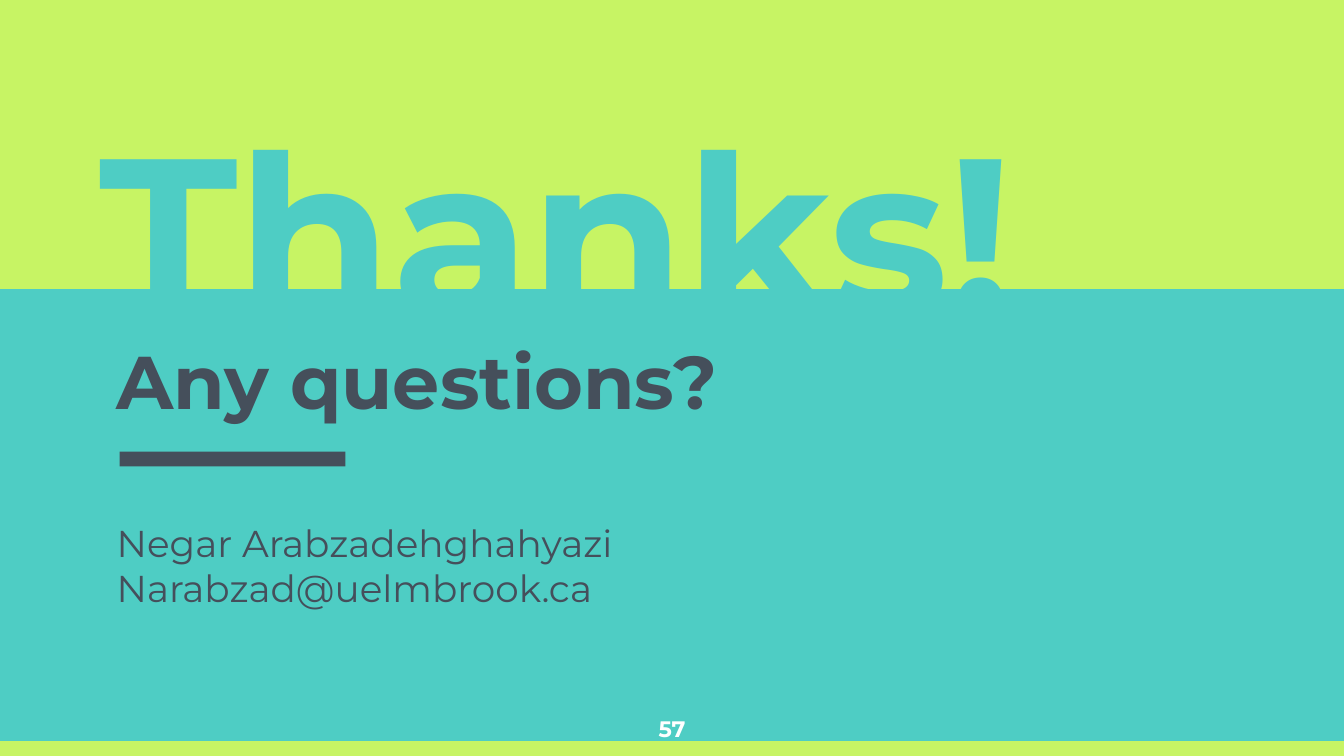
"""Build the closing slide with thanks, a question prompt and contact details."""
from pptx import Presentation
from pptx.dml.color import RGBColor
from pptx.enum.shapes import MSO_SHAPE
from pptx.enum.text import MSO_ANCHOR, MSO_AUTO_SIZE, PP_ALIGN
from pptx.util import Inches, Pt

LIME = RGBColor(0xC7, 0xF4, 0x64)
TEAL = RGBColor(0x4E, 0xCD, 0xC4)
SLATE = RGBColor(0x45, 0x4F, 0x5B)
WHITE = RGBColor(0xFF, 0xFF, 0xFF)
FONT = "Montserrat"
SLIDE_WIDTH = 10
SLIDE_HEIGHT = SLIDE_WIDTH * 9 / 16
BAR_HEIGHT = 0.11


def write_text(text_frame, text, size, color=SLATE, bold=False,
               align=PP_ALIGN.LEFT, anchor=MSO_ANCHOR.TOP, space_before=0):
    text_frame.text = text
    text_frame.word_wrap = True
    text_frame.auto_size = MSO_AUTO_SIZE.NONE
    text_frame.vertical_anchor = anchor
    text_frame.margin_left = text_frame.margin_right = Inches(0.1)
    text_frame.margin_top = text_frame.margin_bottom = Inches(0.1)
    for paragraph in text_frame.paragraphs:
        paragraph.alignment = align
        paragraph.space_before = Pt(space_before)
        font = paragraph.runs[0].font
        font.name = FONT
        font.size = Pt(size)
        font.bold = bold
        font.color.rgb = color


class SlideBuilder:
    def __init__(self, slide, background):
        self.slide = slide
        slide.background.fill.solid()
        slide.background.fill.fore_color.rgb = background

    def rectangle(self, left, top, width, height, color):
        shape = self.slide.shapes.add_shape(
            MSO_SHAPE.RECTANGLE, *map(Inches, (left, top, width, height)))
        shape.shadow.inherit = False
        shape.fill.solid()
        shape.fill.fore_color.rgb = color
        shape.line.fill.background()

    def title(self, left, top, width, height, text, **style):
        title = self.slide.shapes.title
        title.left, title.top = Inches(left), Inches(top)
        title.width, title.height = Inches(width), Inches(height)
        write_text(title.text_frame, text, **style)
        title.element.getparent().append(title.element)

    def text(self, left, top, width, height, text, **style):
        shape = self.slide.shapes.add_textbox(
            *map(Inches, (left, top, width, height)))
        write_text(shape.text_frame, text, **style)


def main():
    presentation = Presentation()
    presentation.slide_width = Inches(SLIDE_WIDTH)
    presentation.slide_height = Inches(SLIDE_HEIGHT)
    slide = presentation.slides.add_slide(presentation.slide_layouts[5])
    builder = SlideBuilder(slide, TEAL)

    builder.rectangle(0, SLIDE_HEIGHT - BAR_HEIGHT, SLIDE_WIDTH, BAR_HEIGHT, LIME)
    builder.rectangle(0, 0, SLIDE_WIDTH, 2.15, LIME)
    builder.title(0.64, 1.52, 7.38, 1.27, "Thanks!", size=120, color=TEAL,
                  bold=True, anchor=MSO_ANCHOR.BOTTOM)
    builder.text(0.77, 2.39, 5.5, 0.69, "Any questions?", size=40, bold=True,
                 space_before=6)
    builder.text(0.77, 3.77, 7.29, 1.55,
                 "Negar Arabzadehghahyazi\nNarabzad@uelmbrook.ca", size=20)
    builder.rectangle(0.89, 3.36, 1.68, BAR_HEIGHT, SLATE)
    builder.text(4.7, 5.22, 0.6, 0.34, "57", size=12, color=WHITE, bold=True,
                 align=PP_ALIGN.CENTER)

    presentation.save("out.pptx")


if __name__ == "__main__":
    main()
